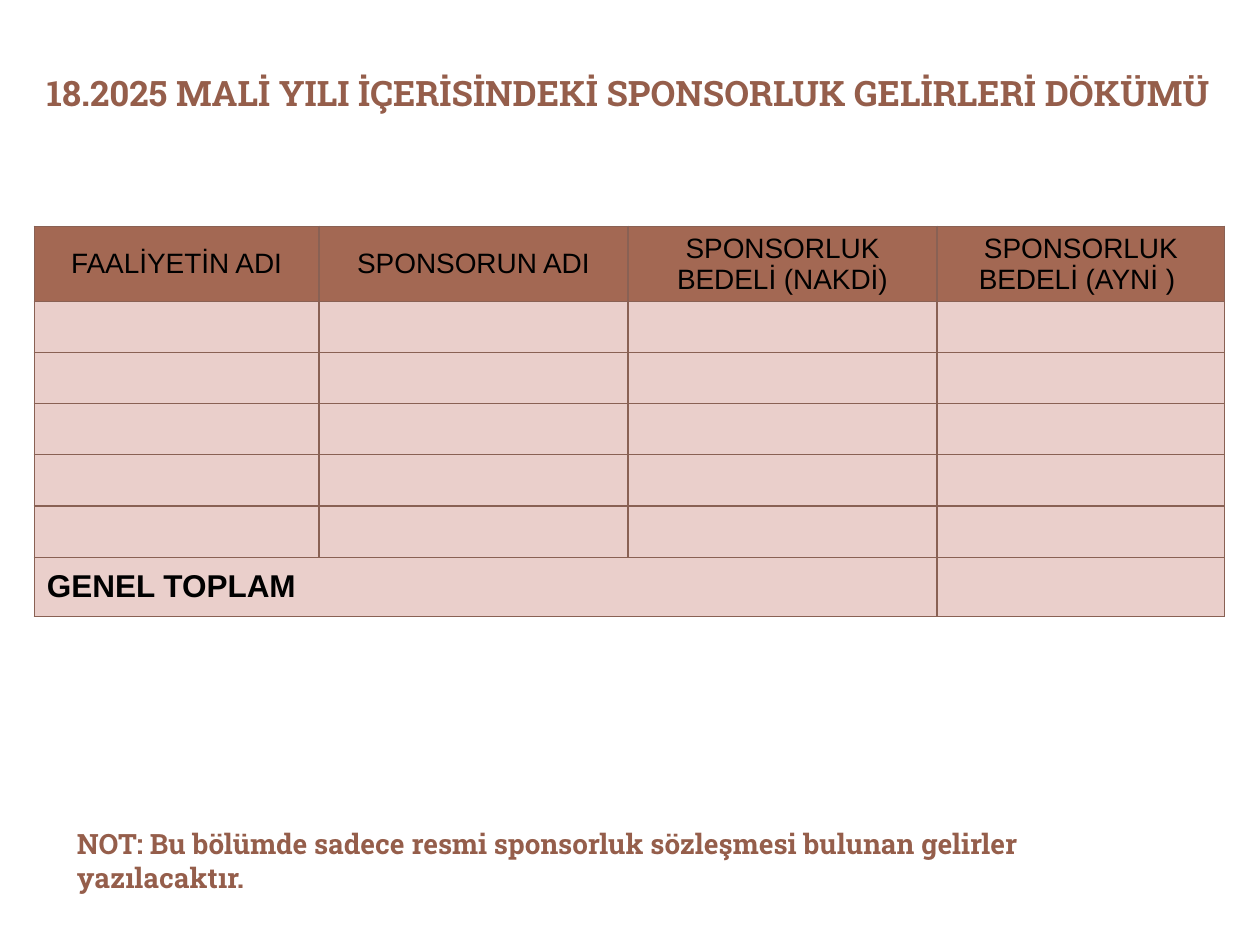
from dataclasses import dataclass

from lxml.etree import SubElement
from pptx import Presentation
from pptx.dml.color import RGBColor
from pptx.enum.text import MSO_ANCHOR, PP_ALIGN
from pptx.oxml.ns import qn
from pptx.slide import Slide
from pptx.table import _Cell
from pptx.util import Cm, Length, Pt


@dataclass(frozen=True)
class Theme:
    heading_font: str = "Roboto Slab"
    table_font: str = "Arial"
    accent: RGBColor = RGBColor(0x95, 0x5E, 0x4B)
    ink: RGBColor = RGBColor(0, 0, 0)
    header_fill: RGBColor = RGBColor(0xA3, 0x68, 0x53)
    body_fill: RGBColor = RGBColor(0xEA, 0xCF, 0xCB)
    border: RGBColor = RGBColor(0x89, 0x61, 0x54)
    border_width: Length = Pt(0.75)
    title_size: Length = Pt(20)
    note_size: Length = Pt(16)
    header_size: Length = Pt(16)
    total_size: Length = Pt(18)


@dataclass(frozen=True)
class Caption:
    text: str
    left: Length
    top: Length
    width: Length
    height: Length
    size: Length
    inset_top: Length = Cm(0.13)


@dataclass(frozen=True)
class Column:
    heading: str
    width: Length


THEME = Theme()

CAPTIONS = (
    Caption("18.2025 MALİ YILI İÇERİSİNDEKİ SPONSORLUK GELİRLERİ DÖKÜMÜ",
            Cm(0.69), Cm(0.53), Cm(24), Cm(3.18), THEME.title_size, Cm(0.92)),
    Caption("NOT: Bu bölümde sadece resmi sponsorluk sözleşmesi bulunan gelirler yazılacaktır.",
            Cm(1.3), Cm(6.51 * 2.54), Cm(22.8), Cm(1.85), THEME.note_size),
)

COLUMNS = (
    Column("FAALİYETİN ADI", Cm(5.74)),
    Column("SPONSORUN ADI", Cm(6.23)),
    Column("SPONSORLUK BEDELİ (NAKDİ)", Cm(6.23)),
    Column("SPONSORLUK BEDELİ (AYNİ ) ", Cm(5.8)),
)
ROW_HEIGHTS = (Cm(1.52), *[Cm(1)] * 5, Cm(1.2))


def add_caption(slide: Slide, caption: Caption) -> None:
    frame = slide.shapes.add_textbox(
        caption.left, caption.top, caption.width, caption.height).text_frame
    frame.word_wrap = True
    frame.margin_top = caption.inset_top
    frame.text = caption.text
    font = frame.paragraphs[0].runs[0].font
    font.name, font.size, font.bold = THEME.heading_font, caption.size, True
    font.color.rgb = THEME.accent


def style_cell(cell: _Cell, fill: RGBColor) -> None:
    properties = cell._tc.get_or_add_tcPr()
    for side in ("a:lnL", "a:lnR", "a:lnT", "a:lnB"):
        line = SubElement(properties, qn(side), w=str(THEME.border_width))
        solid = SubElement(line, qn("a:solidFill"))
        SubElement(solid, qn("a:srgbClr"), val=str(THEME.border))
    cell.fill.solid()
    cell.fill.fore_color.rgb = fill
    cell.vertical_anchor = MSO_ANCHOR.MIDDLE


def write_cell(cell: _Cell, text: str, size: Length, align: PP_ALIGN, bold: bool) -> None:
    cell.text_frame.text = text
    paragraph = cell.text_frame.paragraphs[0]
    paragraph.alignment = align
    font = paragraph.runs[0].font
    font.name, font.size, font.bold = THEME.table_font, size, bold
    font.color.rgb = THEME.ink


def add_sponsorship_table(slide: Slide) -> None:
    table = slide.shapes.add_table(
        len(ROW_HEIGHTS), len(COLUMNS), Cm(0.69), Cm(4.56),
        sum(column.width for column in COLUMNS), sum(ROW_HEIGHTS)).table
    for row, height in zip(table.rows, ROW_HEIGHTS):
        row.height = height
    for index, column in enumerate(COLUMNS):
        table.columns[index].width = column.width
        for row in range(len(ROW_HEIGHTS)):
            style_cell(table.cell(row, index), THEME.body_fill if row else THEME.header_fill)
        write_cell(table.cell(0, index), column.heading, THEME.header_size, PP_ALIGN.CENTER, False)

    last = len(ROW_HEIGHTS) - 1
    total = table.cell(last, 0)
    total.merge(table.cell(last, len(COLUMNS) - 2))
    write_cell(total, "GENEL TOPLAM", THEME.total_size, PP_ALIGN.LEFT, True)


def main() -> None:
    presentation = Presentation()
    presentation.slide_width, presentation.slide_height = Cm(25.4), Cm(19.05)
    slide = presentation.slides.add_slide(presentation.slide_layouts[6])
    add_sponsorship_table(slide)
    for caption in CAPTIONS:
        add_caption(slide, caption)
    presentation.save("out.pptx")


if __name__ == "__main__":
    main()
